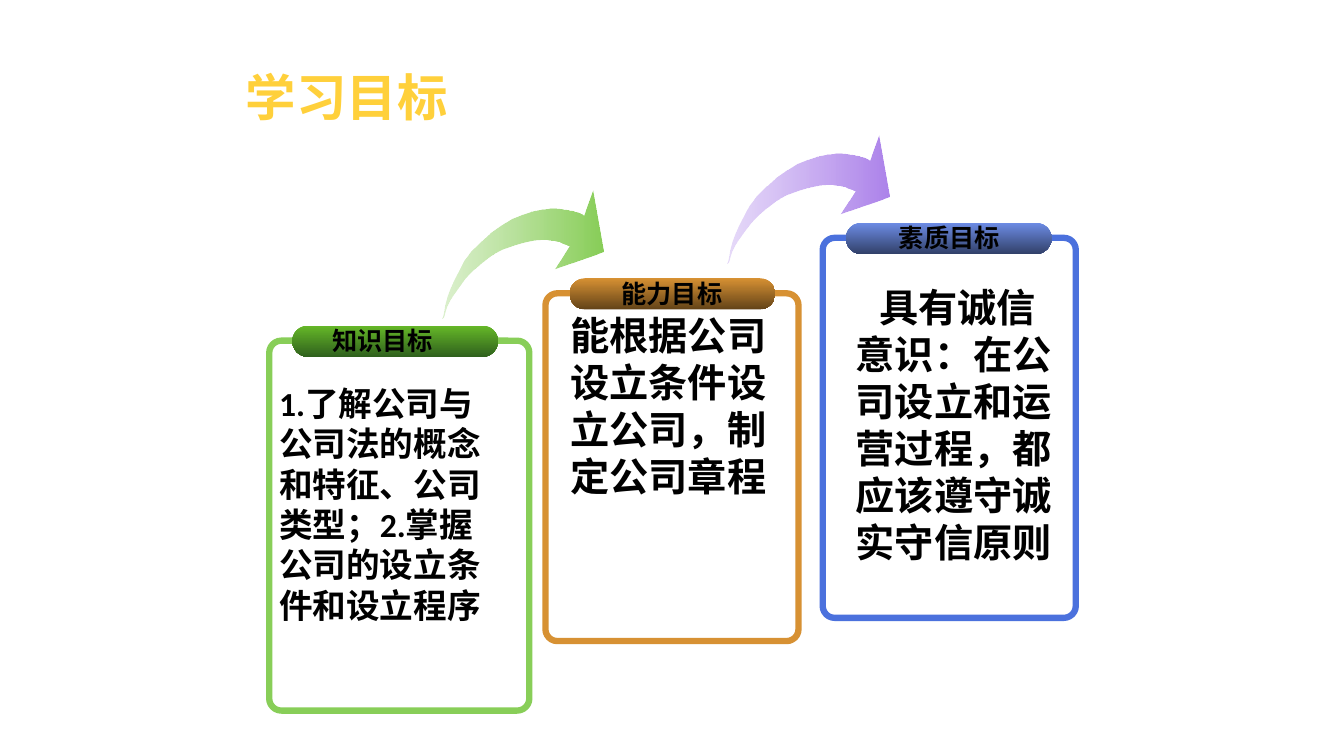
"""Build the learning goals slide: three stepped cards joined by curved arrows."""
from lxml import etree
from pptx import Presentation
from pptx import util as u
from pptx.dml.color import RGBColor
from pptx.enum import shapes, text
from pptx.oxml.ns import qn

PX = 9144
SIZE = (1333, 750)
TITLE = ("学习目标", (234, 64, 866, 71))
CARDS = [
    dict(box=(267, 338, 258, 367), line="88CE58", tab=(290, 323), fade=("66B828", "2F611D"),
         name="知识目标", label=(319, 318), body=(267, 375, 227, 250), size=24, indent=0,
         words="1.了解公司与公司法的概念和特征、公司类型；2.掌握公司的设立条件和设立程序"),
    dict(box=(541, 291, 251, 345), line="D79133", tab=(565, 276), fade=("D79133", "634318"),
         name="能力目标", label=(606, 271), body=(556, 304, 227, 197), size=28, indent=0,
         words="能根据公司设立条件设立公司，制定公司章程"),
    dict(box=(816, 236, 251, 377), line="4B71DD", tab=(839, 221), fade=("6D8CE5", "32416A"),
         name="素质目标", label=(881, 216), body=(839, 276, 227, 337), size=28, indent=23,
         words="具有诚信意识：在公司设立和运营过程，都应该遵守诚实守信原则"),
]
TAB = (204, 31)
LABEL = (121, 40)
ARROWS = [((439, 189), ("93D267", "88CE58")), ((722, 134), ("B48EED", "AD83EB"))]
CURVE = [
    (0, 127), (1, 126), (2, 124), (3, 120), (5, 114), (8, 108), (13, 101), (18, 94),
    (23, 87), (31, 79), (39, 72), (48, 65), (59, 59), (70, 55), (80, 52), (89, 50),
    (97, 49), (104, 49), (111, 50), (116, 51), (120, 53), (123, 54), (125, 55), (126, 55),
    (111, 78), (160, 61), (149, 0), (140, 25), (139, 24), (137, 23), (135, 22), (131, 21),
    (126, 20), (120, 19), (113, 18), (106, 18), (98, 19), (88, 21), (79, 24), (69, 28),
    (58, 35), (48, 42), (38, 51), (29, 60), (22, 69), (17, 79), (12, 88), (8, 97),
    (5, 105), (3, 112), (2, 118), (1, 123),
]


def rgb(code):
    """Turn a hex string into a colour."""
    return RGBColor.from_string(code)


def put(obj, **vals):
    """Set attributes from a dict of values."""
    for key, val in vals.items():
        setattr(obj, key, val)


def emu(nums):
    """Scale px to EMU."""
    return [n * PX for n in nums]


def fade(shape, codes, angle, alpha=100):
    """Fill a shape with a two-stop gradient, the first stop see-through by alpha."""
    shape.shadow.inherit = False
    shape.line.fill.background()
    shape.fill.gradient()
    shape.fill.gradient_angle = angle
    for stop, code, pos in zip(shape.fill.gradient_stops, codes, (0, 1)):
        put(stop, position=pos)
        stop.color.rgb = rgb(code)
    if alpha < 100:
        first = next(shape._element.iter(qn("a:gs")))
        etree.SubElement(first[0], qn("a:alpha"), val=str(alpha * 1000))


def block(box, adj):
    """Add a rounded rectangle."""
    shape = slide.shapes.add_shape(shapes.MSO_SHAPE.ROUNDED_RECTANGLE, *emu(box))
    shape.adjustments[0] = adj
    shape.shadow.inherit = False
    return shape


def write(words, box, size, face="Calibri", code="000000", wrap=True,
          anchor=text.MSO_ANCHOR.TOP, **para):
    """Add a text box of one bold paragraph and return the paragraph."""
    frame = slide.shapes.add_textbox(*emu(box)).text_frame
    put(frame, word_wrap=wrap, vertical_anchor=anchor)
    line = frame.paragraphs[0]
    put(line, **para)
    run = line.add_run()
    run.text = words
    put(run.font, size=u.Pt(size), bold=True, name=face)
    run.font.color.rgb = rgb(code)
    etree.SubElement(run._r.get_or_add_rPr(), qn("a:ea"), typeface=face)
    return line


deck = Presentation()
put(deck, slide_width=SIZE[0] * PX, slide_height=SIZE[1] * PX)
slide = deck.slides.add_slide(deck.slide_layouts[6])

write(*TITLE, 36, "Noto Sans CJK SC", "FFD03B",
      anchor=text.MSO_ANCHOR.MIDDLE, line_spacing=0.9)

for card in CARDS:
    frame = block(card["box"], 0.047)
    frame.fill.background()
    frame.line.color.rgb = rgb(card["line"])
    frame.line.width = u.Pt(4.5)
    fade(block(card["tab"] + TAB, 0.5), card["fade"], 270)

for (left, top), codes in ARROWS:
    spots = [(left + x, top + y) for x, y in CURVE]
    pen = slide.shapes.build_freeform(*spots[0], scale=PX)
    pen.add_line_segments(spots[1:], close=True)
    fade(pen.convert_to_shape(), codes, 0, 32)

for card in CARDS:
    write(card["name"], card["label"] + LABEL, 18, wrap=False,
          alignment=text.PP_ALIGN.CENTER)
    line = write(card["words"], card["body"], card["size"])
    if card["indent"]:
        line._p.get_or_add_pPr().set("indent", str(card["indent"] * PX))

deck.save("out.pptx")
